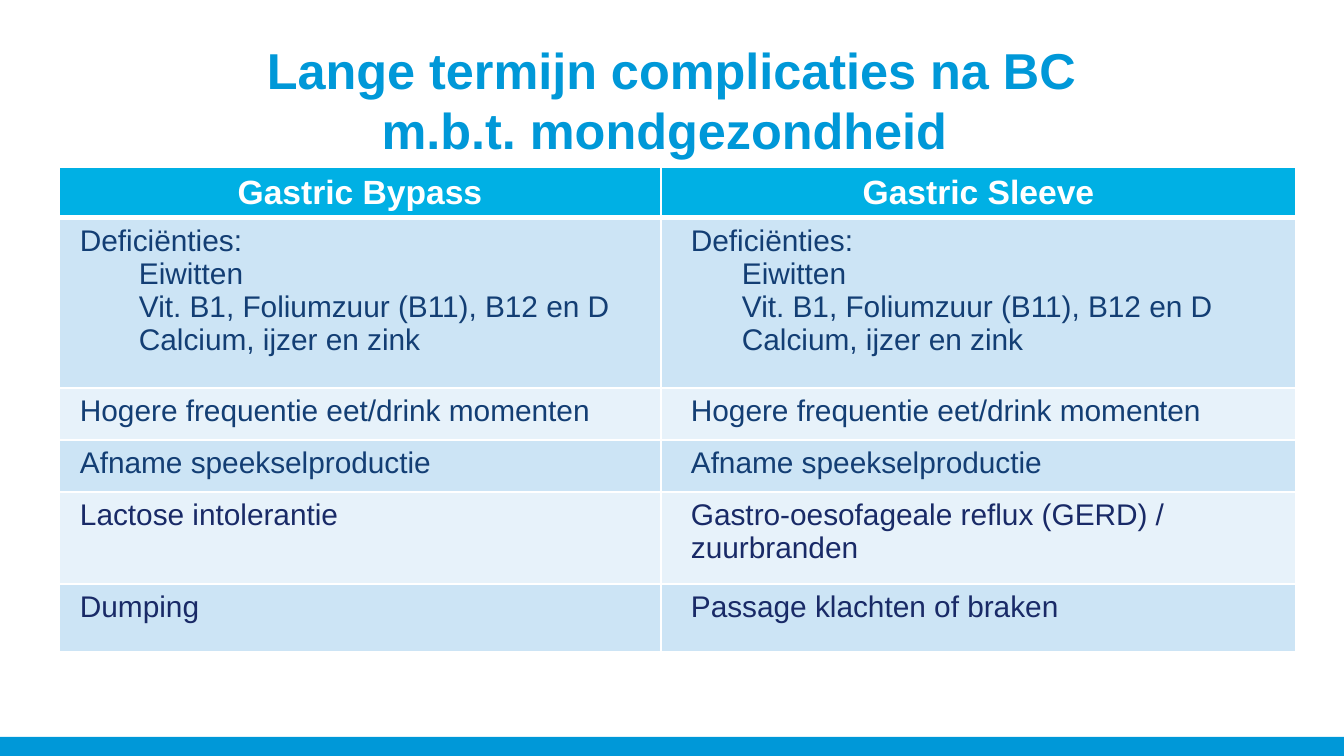
from pptx import Presentation
from pptx.dml.color import RGBColor as RGB
from pptx.enum.shapes import MSO_SHAPE as Shape
from pptx.enum.text import MSO_ANCHOR as Anchor, MSO_AUTO_SIZE as Fit, PP_ALIGN as Align
from pptx.oxml import parse_xml
from pptx.oxml.ns import nsdecls
from pptx.util import Emu, Pt

SCALE = 914400 / 134.4
BLUE, HEAD, DARK, NAVY = "0098D8", "00B0E4", "133E74", "192A67"
BANDS = ["CCE4F5", "E7F2FA"]
LACK = ["Deficiënties:", "\tEiwitten", "\tVit. B1, Foliumzuur (B11), B12 en D",
        "\tCalcium, ijzer en zink"]
MEALS = ["Hogere frequentie eet/drink momenten"]
SPIT = ["Afname speekselproductie"]
# height, text colour, left cell, right cell
ROWS = [
    (170, DARK, LACK, LACK),
    (52, DARK, MEALS, MEALS),
    (52, DARK, SPIT, SPIT),
    (92, NAVY, ["Lactose intolerantie"],
     ["Gastro-oesofageale reflux (GERD) /", "zuurbranden"]),
    (68, NAVY, ["Dumping"], ["Passage klachten of braken"]),
]
COLS = [602, 635]
PADS = [21, 30]
DENTS = [59, 51]


def px(num):
    return Emu(round(num * SCALE))


def color(code):
    return RGB.from_string(code)


def apply(item, form):
    for key, val in form.items():
        setattr(item, key, val)


class Page:
    def __init__(self, wide, high):
        self.deck = Presentation()
        self.deck.slide_width, self.deck.slide_height = px(wide), px(high)
        self.slide = self.deck.slides.add_slide(self.deck.slide_layouts[5])

    def place(self, item, box):
        apply(item, dict(zip(("left", "top", "width", "height"), map(px, box))))

    def style(self, para, size, code, bold=False, **form):
        apply(para, form)
        apply(para.font, {"name": "Arial", "size": Pt(size), "bold": bold})
        para.font.color.rgb = color(code)

    def title(self, text, box):
        item = self.slide.shapes.title
        self.place(item, box)
        frame = item.text_frame
        frame.text = text
        apply(frame, {"auto_size": Fit.NONE, "vertical_anchor": Anchor.TOP,
                      "margin_top": px(9), "word_wrap": True})
        self.style(frame.paragraphs[0], 27, BLUE, True,
                   alignment=Align.CENTER, line_spacing=Pt(32.1))

    def bar(self, box, code):
        item = self.slide.shapes.add_shape(Shape.RECTANGLE, *map(px, box))
        item.shadow.inherit = False
        item.fill.solid()
        item.fill.fore_color.rgb = color(code)
        item.line.fill.background()

    def table(self, left, top, cols, highs):
        item = self.slide.shapes.add_table(
            len(highs), len(cols), px(left), px(top), px(sum(cols)), px(sum(highs)))
        grid = item.table
        for col, wide in zip(grid.columns, cols):
            col.width = px(wide)
        for row, high in zip(grid.rows, highs):
            row.height = px(high)
        return grid

    def cell(self, cell, lines, fill, pad, dent=0, base=1, **form):
        """Fill a cell; a leading tab marks an indented line, base is the lower border."""
        self.edge(cell, base)
        cell.fill.solid()
        cell.fill.fore_color.rgb = color(fill)
        apply(cell, {"margin_left": px(pad), "margin_right": px(pad),
                     "margin_top": px(7), "margin_bottom": px(5)})
        frame = cell.text_frame
        frame.text = "\n".join(line.strip() for line in lines)
        for para, line in zip(frame.paragraphs, lines):
            if line.startswith("\t"):
                para.level = 1
                para._p.get_or_add_pPr().set("marL", str(px(dent)))
            self.style(para, **form)

    def edge(self, cell, base):
        props = cell._tc.get_or_add_tcPr()
        for side, size in zip("LRTB", (1, 1, 1, base)):
            props.append(parse_xml(
                f'<a:ln{side} {nsdecls("a")} w="{Pt(size)}"><a:solidFill>'
                f'<a:srgbClr val="FFFFFF"/></a:solidFill></a:ln{side}>'))


def main():
    page = Page(1344, 756)
    page.bar((0, 737, 1344, 19), BLUE)
    page.title("Lange termijn complicaties na BC\vm.b.t. mondgezondheid ",
               (47, 31, 1249, 114))
    grid = page.table(59, 167, COLS, [51] + [row[0] for row in ROWS])
    for col, name in enumerate(["Gastric Bypass", "Gastric Sleeve"]):
        page.cell(grid.cell(0, col), [name], HEAD, 13, base=3, size=18,
                  code="FFFFFF", bold=True, alignment=Align.CENTER)
    for row, (_, code, *texts) in enumerate(ROWS):
        for col, lines in enumerate(texts):
            page.cell(grid.cell(row + 1, col), lines, BANDS[row % 2], PADS[col],
                      DENTS[col], size=16, code=code, line_spacing=Pt(17.7))
    page.deck.save("out.pptx")


if __name__ == "__main__":
    main()
